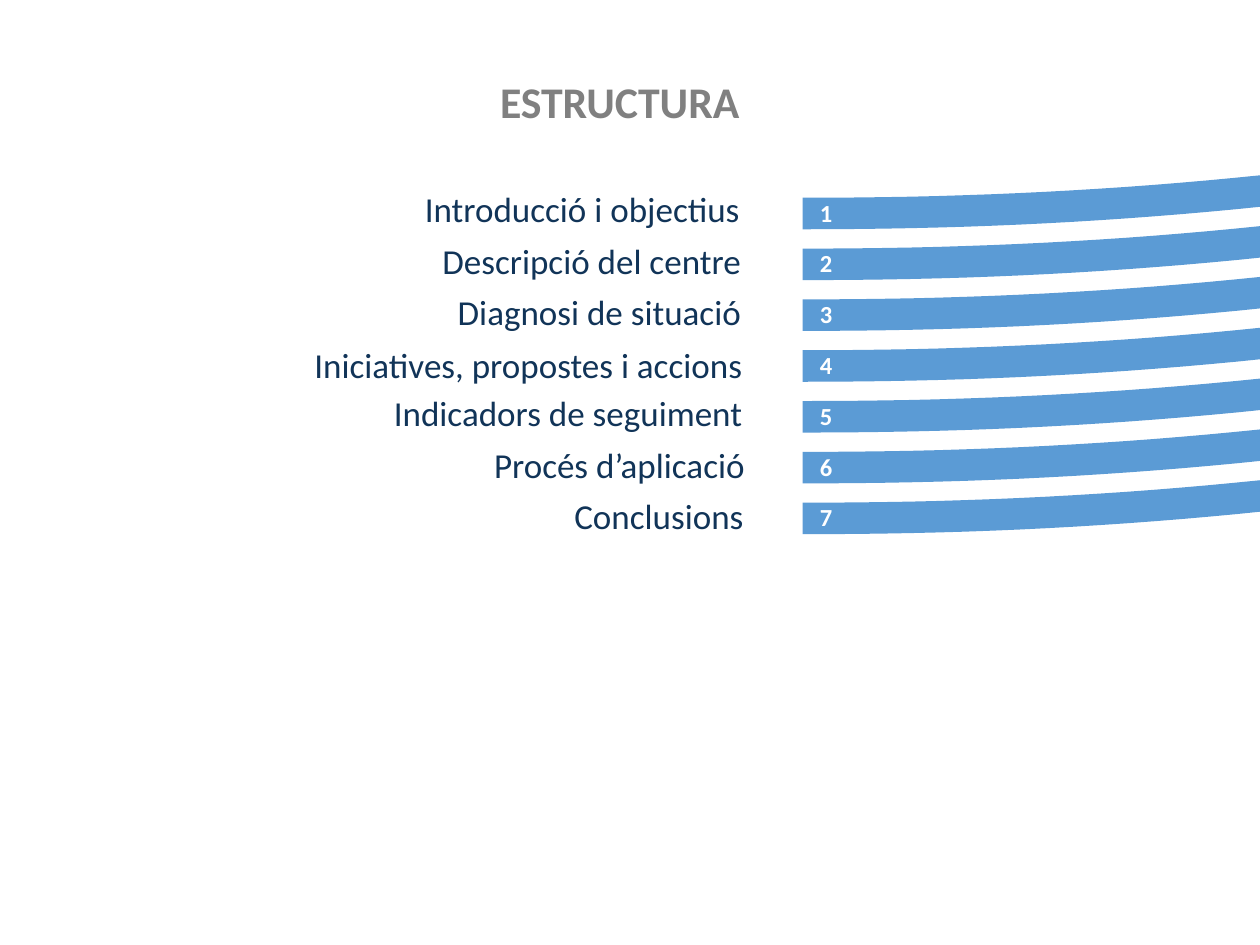
import pptx
import pptx.dml.color
import pptx.enum.text
import pptx.util

COLORS = {"title": "808080", "topic": "113458", "band": "5B9BD5", "number": "FFFFFF"}
COLUMNS, ROWS = 100, 75
CELL = pptx.util.Inches(0.1)
PITCH = 24.2 / 6
BAND_LEFT, BAND_TOP, BAND_THICKNESS = 63.7, 15.7, 2.5
TOP_REACH, BOTTOM_REACH, RISE, BEND = 64.2, 64.7, 5.9, 2.1
STEPS = 30
NUMBER_LEFT, NUMBER_TOP = 64.1, 16.2
TOPICS = [
    ("Introducció i objectius", 25.6, 15.3, 34.1, 3.5),
    ("Descripció del centre", 29.6, 19.4, 30.2, 3.1),
    ("Diagnosi de situació", 25.6, 23.5, 34.2, 3.3),
    ("Iniciatives, propostes i accions", 20.1, 27.7, 39.8, 3.4),
    ("Indicadors de seguiment", 22, 31.5, 37.9, 3.5),
    ("Procés d’aplicació", 27, 35.6, 33.1, 2.9),
    ("Conclusions", 37.3, 39.7, 22.7, 3.7),
]


def cells(count):
    """Return the length of a number of grid cells."""
    return pptx.util.Emu(round(count * CELL))


def color(role):
    """Return the colour of a role on the slide."""
    return pptx.dml.color.RGBColor.from_string(COLORS[role])


def add_text(slide, text, area, role, size, spacing, bold=False, align="LEFT"):
    """Add one line of text in an area given in grid cells."""
    box = slide.shapes.add_textbox(*map(cells, area))
    frame = box.text_frame
    frame.word_wrap = True
    frame.text = text
    line = frame.paragraphs[0]
    line.alignment = pptx.enum.text.PP_ALIGN[align]
    line.line_spacing = spacing
    font = line.runs[0].font
    font.name = "Calibri"
    font.size = pptx.util.Pt(size)
    font.bold = bold
    font.color.rgb = color(role)


def band_edge(top, reach):
    """Return the points of a rising edge from left to right."""
    points = []
    for step in range(STEPS + 1):
        run = reach * step / STEPS
        rise = RISE * (run / TOP_REACH) ** BEND
        points.append((cells(BAND_LEFT + run), cells(top - rise)))
    return points


def add_band(slide, top):
    """Add a curved band that sweeps out over the right edge."""
    upper = band_edge(top, TOP_REACH)
    lower = band_edge(top + BAND_THICKNESS, BOTTOM_REACH)
    outline = slide.shapes.build_freeform(*upper[0])
    outline.add_line_segments(upper[1:] + lower[::-1], close=True)
    band = outline.convert_to_shape()
    band.shadow.inherit = False
    band.fill.solid()
    band.fill.fore_color.rgb = color("band")
    band.line.fill.background()


def main():
    """Build the outline slide and save it."""
    deck = pptx.Presentation()
    deck.slide_width, deck.slide_height = cells(COLUMNS), cells(ROWS)
    slide = deck.slides.add_slide(deck.slide_layouts[6])
    add_text(slide, "ESTRUCTURA", (38.7, 5.9, 48.2, 4.5), "title", 25, 0.9, bold=True)
    for index, (topic, *area) in enumerate(TOPICS):
        add_text(slide, topic, area, "topic", 20, 0.7, align="RIGHT")
        add_band(slide, BAND_TOP + index * PITCH)
        number_area = (NUMBER_LEFT, NUMBER_TOP + index * PITCH, 3.3, 2.3)
        add_text(slide, str(index + 1), number_area, "number", 14, 0.5, bold=True)
    deck.save("out.pptx")


if __name__ == "__main__":
    main()
